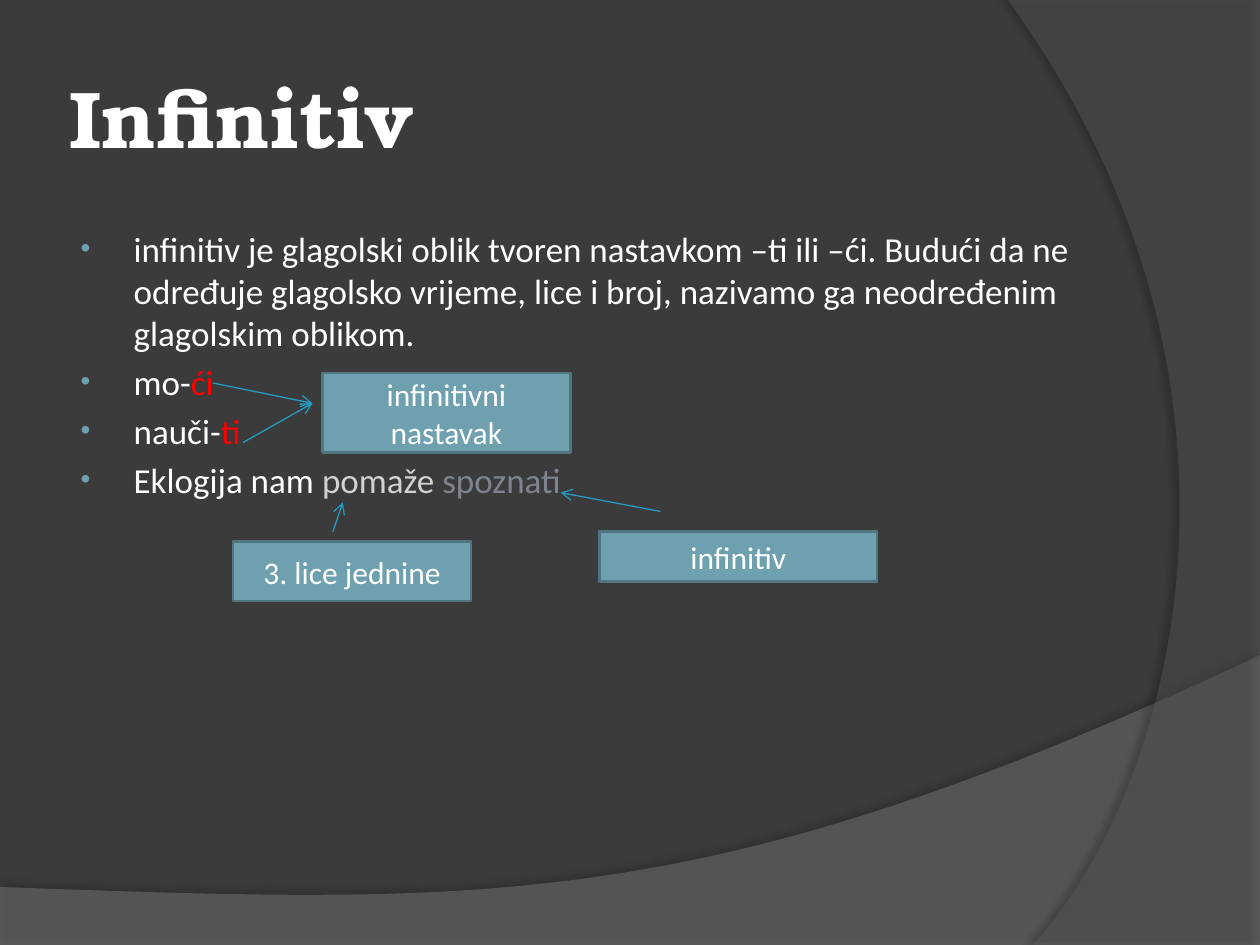
from lxml.etree import SubElement
from pptx import Presentation
from pptx.dml.color import RGBColor
from pptx.enum.shapes import MSO_CONNECTOR, MSO_SHAPE
from pptx.enum.text import MSO_ANCHOR, MSO_AUTO_SIZE, PP_ALIGN
from pptx.oxml.ns import qn
from pptx.util import Cm, Pt

BACKGROUND = RGBColor(0x3B, 0x3B, 0x3B)
WAVE = RGBColor(0x7F, 0x7F, 0x7F)
ARC = RGBColor(0x5E, 0x5E, 0x5E)
WHITE = RGBColor(0xFF, 0xFF, 0xFF)
RED = RGBColor(0xFF, 0x00, 0x00)
PALE = RGBColor(0xD4, 0xD2, 0xD0)
GREY = RGBColor(0x7E, 0x84, 0x8D)
TEAL = RGBColor(0x6E, 0xA0, 0xB0)
TEAL_DARK = RGBColor(0x51, 0x76, 0x82)
ARROW = RGBColor(0x23, 0x9B, 0xC2)

HEADING_FONT = "TeX Gyre Bonum"
TEXT_FONT = "Calibri"

ITEMS = [
    [("infinitiv je glagolski oblik tvoren nastavkom –ti ili –ći. Budući da ne "
      "određuje glagolsko vrijeme, lice i broj, nazivamo ga neodređenim "
      "glagolskim oblikom.", WHITE)],
    [("mo-", WHITE), ("ći", RED)],
    [("nauči-", WHITE), ("ti", RED)],
    [("Eklogija nam ", WHITE), ("pomaže ", PALE), ("spoznati", GREY)],
]
LABELS = [
    ("infinitivni nastavak", 2.5, 0.02, 5, 1.6),
    ("3. lice jednine", 0.7, 3.42, 4.8, 1.2),
    ("infinitiv", 8.09, 3.22, 5.59, 1),
]
ARROWS = [
    ((0.9, 1.42), (2.3, 0.63)),
    ((0.29, 0.22), (2.3, 0.63)),
    ((2.71, 3.22), (2.91, 2.63)),
    ((9.31, 2.81), (7.3, 2.43)),
]


def add_element(parent, tag, **attributes):
    """Append a DrawingML element and return it."""
    return SubElement(parent, qn(tag), {key: str(value) for key, value in attributes.items()})


def place(shape, box):
    """Move a shape to a box given in centimetres."""
    shape.left, shape.top, shape.width, shape.height = map(Cm, box)


def curve(start, first, second, end, steps=60):
    """Return points along a cubic Bézier curve."""
    points = []
    for step in range(steps + 1):
        t = step / steps
        weights = ((1 - t) ** 3, 3 * t * (1 - t) ** 2, 3 * t ** 2 * (1 - t), t ** 3)
        points.append(tuple(
            sum(weight * value for weight, value in zip(weights, axis))
            for axis in zip(start, first, second, end)))
    return points


def add_sweep(page, box, outline, color, opacity, shadow_opacity, distance, direction):
    """Draw a translucent backdrop whose outline is in fractions of the box."""
    left, top, width, height = box
    points = [(Cm(left + x * width), Cm(top + y * height)) for x, y in outline]
    builder = page.shapes.build_freeform(*points[0])
    builder.add_line_segments(points[1:], close=True)
    sweep = builder.convert_to_shape()
    sweep.fill.solid()
    sweep.fill.fore_color.rgb = color
    sweep.line.fill.background()
    properties = sweep._element.spPr
    add_element(properties.find(".//" + qn("a:srgbClr")), "a:alpha", val=opacity * 1000)
    effects = add_element(properties, "a:effectLst")
    shadow = add_element(effects, "a:outerShdw", blurRad=Pt(4), dist=Pt(distance),
                         dir=direction * 60000, algn="ctr", rotWithShape=0)
    shade = add_element(shadow, "a:srgbClr", val="000000")
    add_element(shade, "a:alpha", val=shadow_opacity * 1000)
    return sweep


def add_backdrop(page, width, height):
    """Fill the background and put both sweeps behind the text."""
    page.background.fill.solid()
    page.background.fill.fore_color.rgb = BACKGROUND
    wave_outline = [(0, 1), (1, 1)] + curve((1, 0), (0.56, 0.9), (0.39, 0.86), (0, 0.8))
    arc_outline = [(1, 0), (1, 1)] + curve((0.1, 1), (0.68, 0.83), (1.09, 0.4), (0, 0))
    wave = add_sweep(page, (0, 13.21, width, height - 13.21), wave_outline,
                     WAVE, 45, 35, 3.5, 270)
    arc = add_sweep(page, (width - 5.08, 0, 5.08, height), arc_outline,
                    ARC, 40, 45, 4, 180)
    tree = page.shapes._spTree
    for position, sweep in enumerate((wave, arc), start=2):
        tree.insert(position, sweep._element)


def fill_title(page, box):
    """Write the heading in the title placeholder."""
    title = page.shapes.title
    place(title, box)
    frame = title.text_frame
    frame.text = "Infinitiv"
    frame.auto_size = MSO_AUTO_SIZE.NONE
    frame.vertical_anchor = MSO_ANCHOR.MIDDLE
    frame.margin_left = frame.margin_right = Cm(0.13)
    para = frame.paragraphs[0]
    para.alignment = PP_ALIGN.LEFT
    para.font.name = HEADING_FONT
    para.font.size = Pt(46)
    para.font.bold = True
    para.font.color.rgb = WHITE


def add_bullet(para):
    """Give a paragraph a hanging teal bullet."""
    properties = para._p.get_or_add_pPr()
    properties.set("marL", str(Cm(1.17)))
    properties.set("indent", str(Cm(-1.07)))
    color = add_element(properties, "a:buClr")
    add_element(color, "a:srgbClr", val=TEAL)
    add_element(properties, "a:buSzPct", val=80000)
    add_element(properties, "a:buFont", typeface="Arial")
    add_element(properties, "a:buChar", char="•")


def fill_body(page, box):
    """Write the bulleted list in the body placeholder."""
    body = page.placeholders[1]
    place(body, box)
    frame = body.text_frame
    frame.auto_size = MSO_AUTO_SIZE.NONE
    for index, item in enumerate(ITEMS):
        para = frame.add_paragraph() if index else frame.paragraphs[0]
        add_bullet(para)
        para.space_before = Pt(4)
        para.font.name = TEXT_FONT
        para.font.size = Pt(20)
        for text, color in item:
            span = para.add_run()
            span.text = text
            span.font.color.rgb = color


def add_label(page, box, text):
    """Draw one teal label with centred text."""
    label = page.shapes.add_shape(MSO_SHAPE.RECTANGLE, *map(Cm, box))
    label.shadow.inherit = False
    label.fill.solid()
    label.fill.fore_color.rgb = TEAL
    label.line.color.rgb = TEAL_DARK
    label.line.width = Pt(1.5)
    frame = label.text_frame
    frame.word_wrap = True
    frame.vertical_anchor = MSO_ANCHOR.MIDDLE
    frame.text = text
    para = frame.paragraphs[0]
    para.alignment = PP_ALIGN.CENTER
    para.font.name = TEXT_FONT
    para.font.size = Pt(18)
    para.font.color.rgb = WHITE


def add_arrow(page, start, end):
    """Draw a thin arrow between two points in centimetres."""
    arrow = page.shapes.add_connector(MSO_CONNECTOR.STRAIGHT, *map(Cm, start + end))
    arrow.line.color.rgb = ARROW
    arrow.line.width = Pt(0.75)
    add_element(arrow.line._get_or_add_ln(), "a:tailEnd", type="arrow")
    add_element(arrow._element.spPr, "a:effectLst")


def add_annotations(page, left, top):
    """Place the labels and their arrows from a top left corner."""
    for text, x, y, width, height in LABELS:
        add_label(page, (left + x, top + y, width, height), text)
    for ends in ARROWS:
        add_arrow(page, *((left + x, top + y) for x, y in ends))


def main():
    """Build and save the deck."""
    deck = Presentation()
    width, height = 25.4, 19.05
    deck.slide_width, deck.slide_height = Cm(width), Cm(height)
    page = deck.slides.add_slide(deck.slide_layouts[1])
    add_backdrop(page, width, height)
    fill_title(page, (1.27, 0.76, 20.75, 3.18))
    fill_body(page, (1.27, 4.45, 20.75, 12.57))
    add_annotations(page, 4, 7.5)
    deck.save("out.pptx")


if __name__ == "__main__":
    main()
